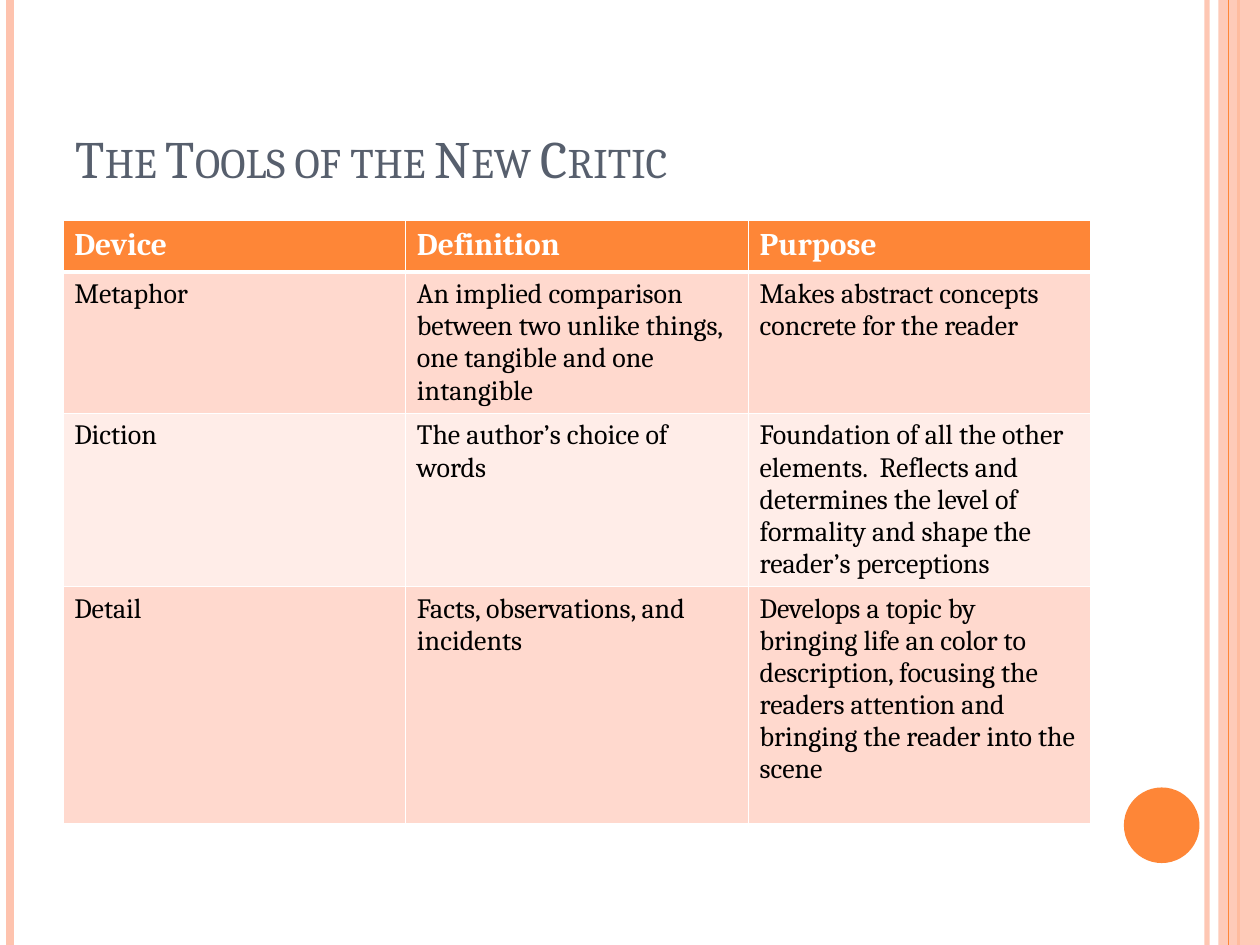
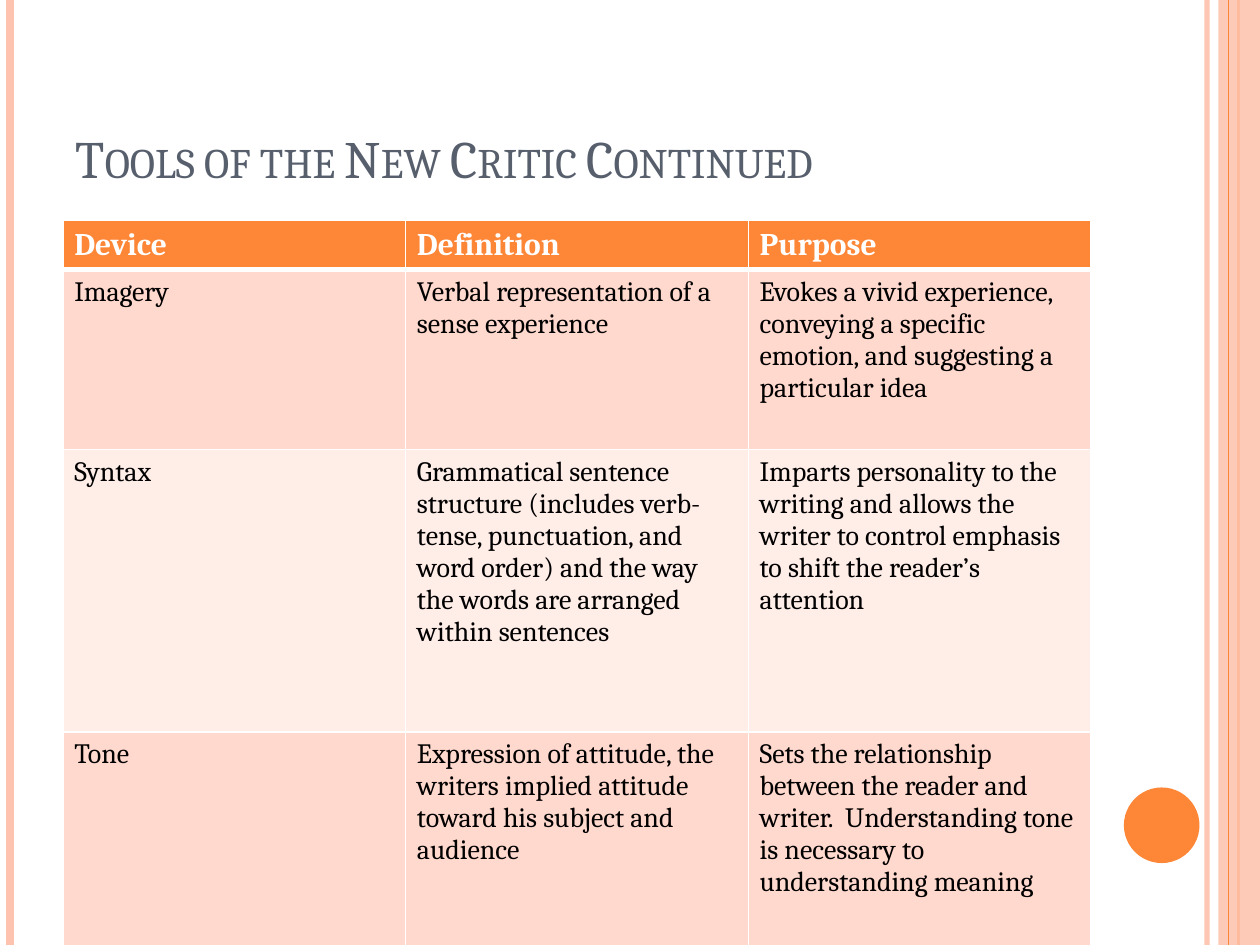
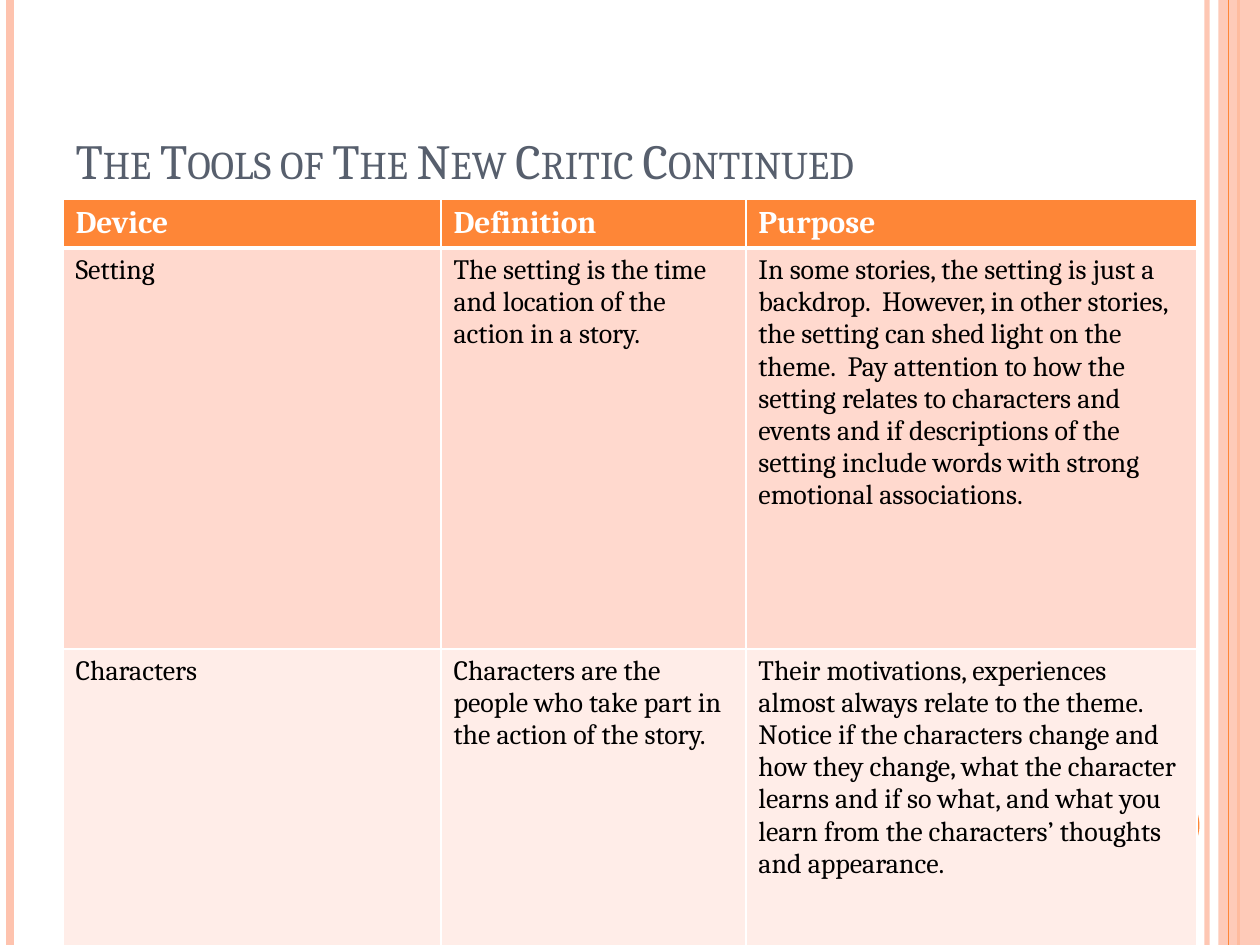
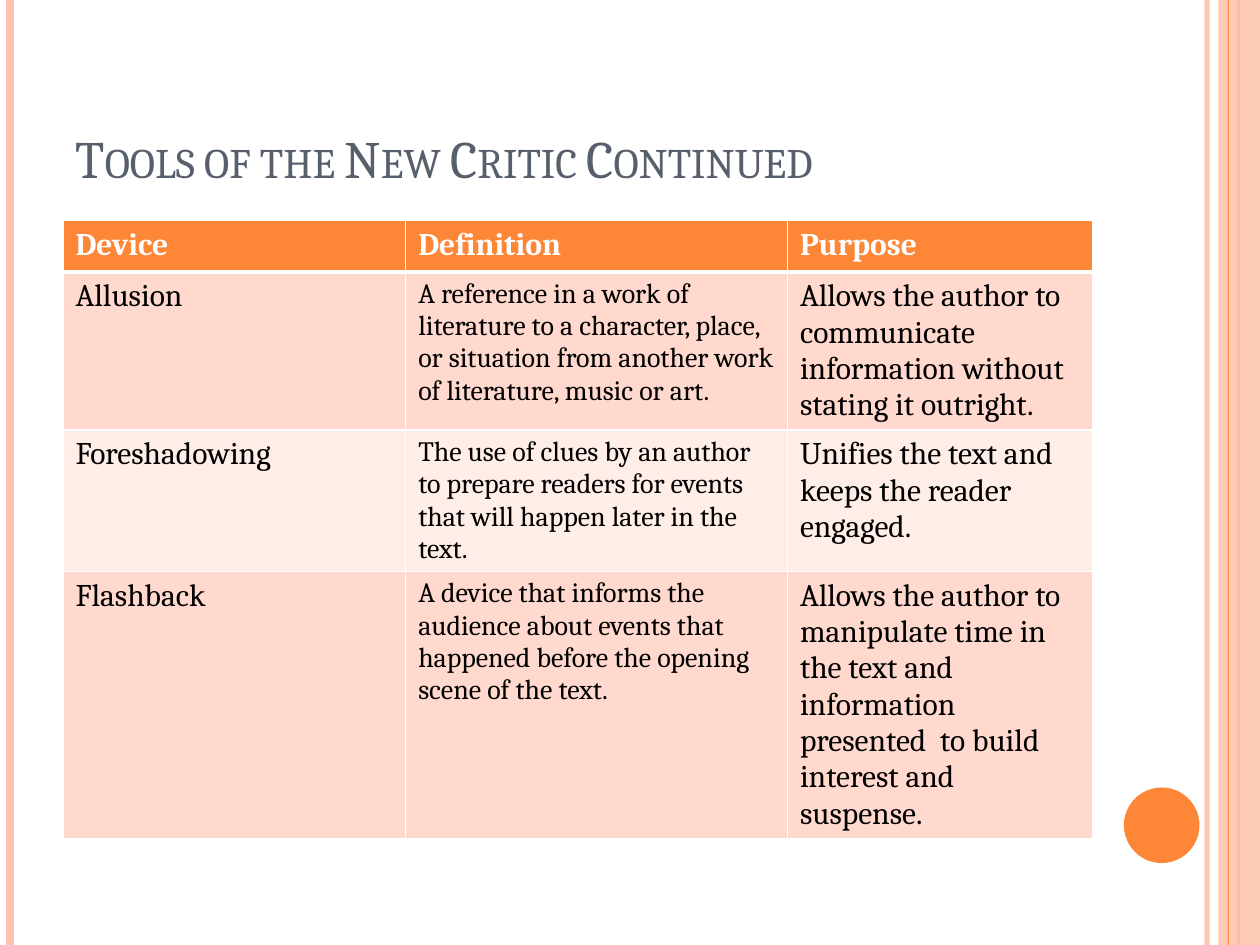
from dataclasses import dataclass

from lxml.etree import SubElement
from pptx import Presentation
from pptx.dml.color import RGBColor
from pptx.enum.shapes import MSO_CONNECTOR, MSO_SHAPE
from pptx.enum.text import MSO_ANCHOR, MSO_AUTO_SIZE, PP_ALIGN
from pptx.oxml.ns import qn
from pptx.util import Emu, Pt

EMU_PER_PX = 9144
SLIDE_WIDTH, SLIDE_HEIGHT = 1000, 750
TITLE_ONLY_LAYOUT = 5
FONT = "Cambria"

ORANGE = "FE8637"
PEACH = "FEC3AE"
SLATE = "575F6D"
WHITE = "FFFFFF"
BLACK = "000000"
ROW_FILLS = ("FFD9CE", "FFEDE8")
HEADERS = ("Device", "Definition", "Purpose")
HEADER_SIZE = 18
THIN_BORDER, HEADER_BORDER = 1, 3


@dataclass(frozen=True)
class Stripe:
    x: int
    color: str
    weight: float
    opacity: int = 100


@dataclass(frozen=True)
class Block:
    preset: MSO_SHAPE
    left: int
    top: int
    width: int
    height: int
    color: str
    opacity: int = 100


@dataclass(frozen=True)
class DeviceSlide:
    title: str
    columns: tuple[int, ...]
    row_heights: tuple[int, ...]
    devices: tuple[tuple[str, str, str], ...]
    title_size: int = 30
    table_top: int = 175
    side_inset: int = 10
    body_sizes: tuple[int, int, int] = (16, 16, 16)


DECORATIONS: tuple[Stripe | Block, ...] = (
    Stripe(958, PEACH, 3, 93),
    Stripe(8, PEACH, 4.5),
    Stripe(983, ORANGE, 1.5),
    Block(MSO_SHAPE.RECTANGLE, 967, 0, 33, SLIDE_HEIGHT, PEACH, 87),
    Stripe(975, ORANGE, 0.75),
    Block(MSO_SHAPE.OVAL, 892, 625, 60, 60, ORANGE),
)

SLIDES = (
    DeviceSlide(
        title="The Tools of the New Critic",
        columns=(272, 272, 272),
        row_heights=(41, 41, 41, 188),
        side_inset=9,
        devices=(
            (
                "Metaphor",
                "An implied comparison between two unlike things, one tangible and one intangible",
                "Makes abstract concepts concrete for the reader",
            ),
            (
                "Diction",
                "The author’s choice of words",
                "Foundation of all the other elements.  Reflects and determines the level of "
                "formality and shape the reader’s perceptions",
            ),
            (
                "Detail",
                "Facts, observations, and incidents",
                "Develops a topic by bringing life an color to description, focusing the "
                "readers attention and bringing the reader into the scene",
            ),
        ),
    ),
    DeviceSlide(
        title="Tools of the New Critic Continued",
        columns=(272, 272, 272),
        row_heights=(36, 143, 224, 197),
        side_inset=9,
        devices=(
            (
                "Imagery",
                "Verbal representation of a sense experience",
                "Evokes a vivid experience, conveying a specific emotion, and suggesting a "
                "particular idea",
            ),
            (
                "Syntax",
                "Grammatical sentence structure (includes verb-tense, punctuation, and word "
                "order) and the way the words are arranged within sentences",
                "Imparts personality to the writing and allows the writer to control emphasis "
                "to shift the reader’s attention",
            ),
            (
                "Tone",
                "Expression of attitude, the writers implied attitude toward his subject and "
                "audience",
                "Sets the relationship between the reader and writer.  Understanding tone is "
                "necessary to understanding meaning",
            ),
        ),
    ),
    DeviceSlide(
        title="The Tools of The New Critic Continued",
        title_size=28,
        table_top=158,
        columns=(300, 242, 358),
        row_heights=(39, 318, 293),
        devices=(
            (
                "Setting",
                "The setting is the time and location of the action in a story.",
                "In some stories, the setting is just a backdrop.  However, in other stories, "
                "the setting can shed light on the theme.  Pay attention to how the setting "
                "relates to characters and events and if descriptions of the setting include "
                "words with strong emotional associations.",
            ),
            (
                "Characters",
                "Characters are the people who take part in the action of the story.",
                "Their motivations, experiences almost always relate to the theme.  Notice if "
                "the characters change and how they change, what the character learns and if "
                "so what, and what you learn from the characters’ thoughts and appearance.",
            ),
        ),
    ),
    DeviceSlide(
        title="Tools of the New Critic Continued",
        columns=(272, 303, 242),
        row_heights=(41, 41, 41, 41),
        body_sizes=(18, 16, 18),
        devices=(
            (
                "Allusion",
                "A reference in a work of literature to a character, place, or situation from "
                "another work of literature, music or art.",
                "Allows the author to communicate information without stating it outright.",
            ),
            (
                "Foreshadowing",
                "The use of clues by an author to prepare readers for events that will happen "
                "later in the text.",
                "Unifies the text and keeps the reader engaged.",
            ),
            (
                "Flashback",
                "A device that informs the audience about events that happened before the "
                "opening scene of the text.",
                "Allows the author to manipulate time in the text and information presented  "
                "to build interest and suspense.",
            ),
        ),
    ),
)


def px(length: int) -> Emu:
    return Emu(length * EMU_PER_PX)


def rgb(color: str) -> RGBColor:
    return RGBColor.from_string(color)


def set_opacity(shape, percent: int) -> None:
    if percent < 100:
        for color in shape.element.iter(qn("a:srgbClr")):
            SubElement(color, qn("a:alpha"), val=str(percent * 1000))


def add_run(paragraph, text: str, size: int, color: str, bold: bool = False):
    run = paragraph.add_run()
    run.text = text
    run.font.name = FONT
    run.font.size = Pt(size)
    run.font.bold = bold
    run.font.color.rgb = rgb(color)
    return run


def add_stripe(slide, stripe: Stripe) -> None:
    x = px(stripe.x)
    connector = slide.shapes.add_connector(MSO_CONNECTOR.STRAIGHT, x, 0, x, px(SLIDE_HEIGHT))
    connector.line.color.rgb = rgb(stripe.color)
    connector.line.width = Pt(stripe.weight)
    set_opacity(connector, stripe.opacity)
    SubElement(connector.element.spPr, qn("a:effectLst"))


def add_block(slide, block: Block) -> None:
    shape = slide.shapes.add_shape(
        block.preset, px(block.left), px(block.top), px(block.width), px(block.height)
    )
    shape.shadow.inherit = False
    shape.fill.solid()
    shape.fill.fore_color.rgb = rgb(block.color)
    shape.line.fill.background()
    set_opacity(shape, block.opacity)


def add_decorations(slide) -> None:
    for decoration in DECORATIONS:
        if isinstance(decoration, Stripe):
            add_stripe(slide, decoration)
        else:
            add_block(slide, decoration)


def set_title(slide, text: str, size: int) -> None:
    title = slide.shapes.title
    title.left, title.top, title.width, title.height = px(50), px(30), px(817), px(125)
    frame = title.text_frame
    frame.word_wrap = True
    frame.auto_size = MSO_AUTO_SIZE.NONE
    frame.vertical_anchor = MSO_ANCHOR.BOTTOM
    paragraph = frame.paragraphs[0]
    paragraph.alignment = PP_ALIGN.LEFT
    run = add_run(paragraph, text, size, SLATE)
    run.font._element.set("cap", "small")


def set_borders(cell, top: int, bottom: int) -> None:
    properties = cell._tc.get_or_add_tcPr()
    weights = {"L": THIN_BORDER, "R": THIN_BORDER, "T": top, "B": bottom}
    for side, weight in weights.items():
        line = SubElement(properties, qn(f"a:ln{side}"), w=str(Pt(weight)))
        SubElement(SubElement(line, qn("a:solidFill")), qn("a:srgbClr"), val=WHITE)


def format_cell(cell, row: int, inset: int) -> None:
    set_borders(
        cell,
        top=HEADER_BORDER if row == 1 else THIN_BORDER,
        bottom=HEADER_BORDER if row == 0 else THIN_BORDER,
    )
    cell.fill.solid()
    cell.fill.fore_color.rgb = rgb(ROW_FILLS[(row - 1) % 2] if row else ORANGE)
    cell.margin_left = cell.margin_right = px(inset)
    cell.margin_top = cell.margin_bottom = px(5)


def add_device_table(slide, content: DeviceSlide) -> None:
    rows = (HEADERS, *content.devices)
    table = slide.shapes.add_table(
        len(rows),
        len(HEADERS),
        px(50),
        px(content.table_top),
        px(sum(content.columns)),
        px(sum(content.row_heights)),
    ).table
    for column, width in zip(table.columns, content.columns):
        column.width = px(width)
    for row_index, texts in enumerate(rows):
        table.rows[row_index].height = px(content.row_heights[row_index])
        for column_index, text in enumerate(texts):
            cell = table.cell(row_index, column_index)
            format_cell(cell, row_index, content.side_inset)
            paragraph = cell.text_frame.paragraphs[0]
            if row_index == 0:
                add_run(paragraph, text, HEADER_SIZE, WHITE, bold=True)
            else:
                add_run(paragraph, text, content.body_sizes[column_index], BLACK)


def main() -> None:
    presentation = Presentation()
    presentation.slide_width = px(SLIDE_WIDTH)
    presentation.slide_height = px(SLIDE_HEIGHT)
    layout = presentation.slide_layouts[TITLE_ONLY_LAYOUT]
    for content in SLIDES:
        slide = presentation.slides.add_slide(layout)
        add_decorations(slide)
        set_title(slide, content.title, content.title_size)
        add_device_table(slide, content)
    presentation.save("out.pptx")


if __name__ == "__main__":
    main()
